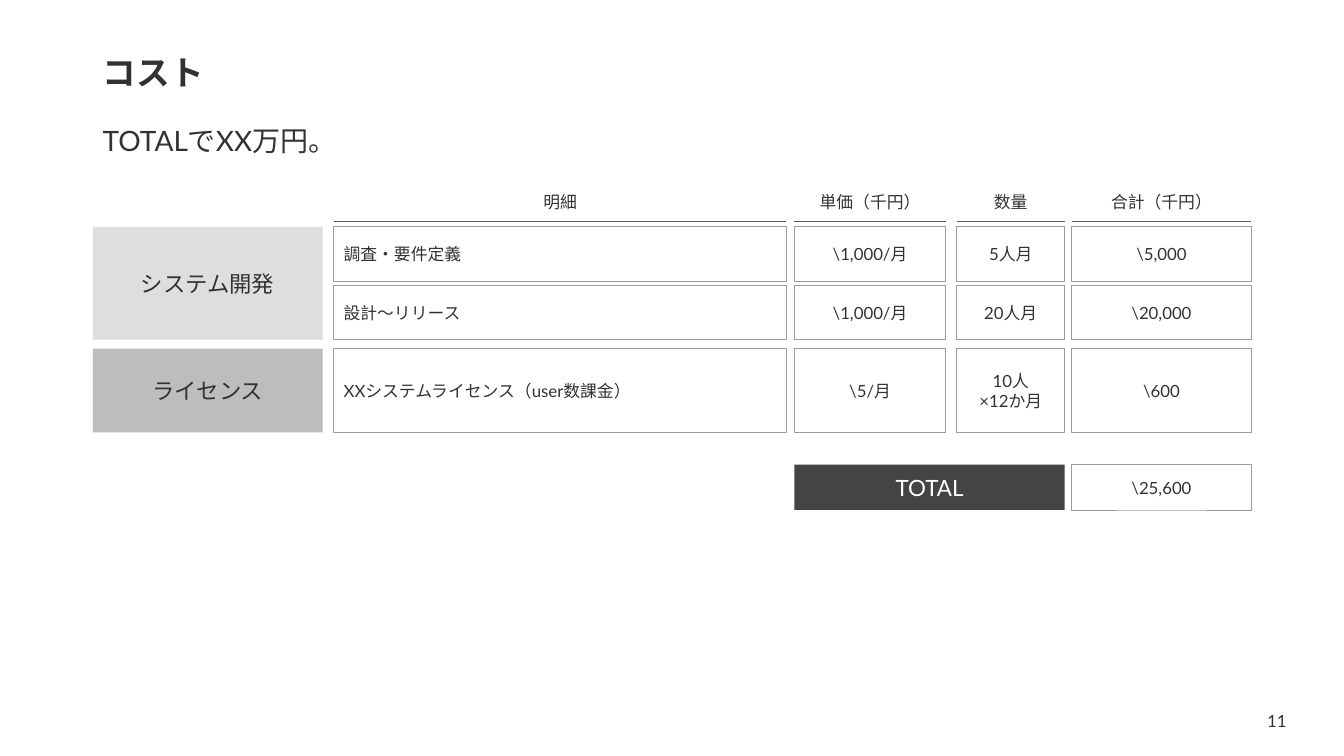
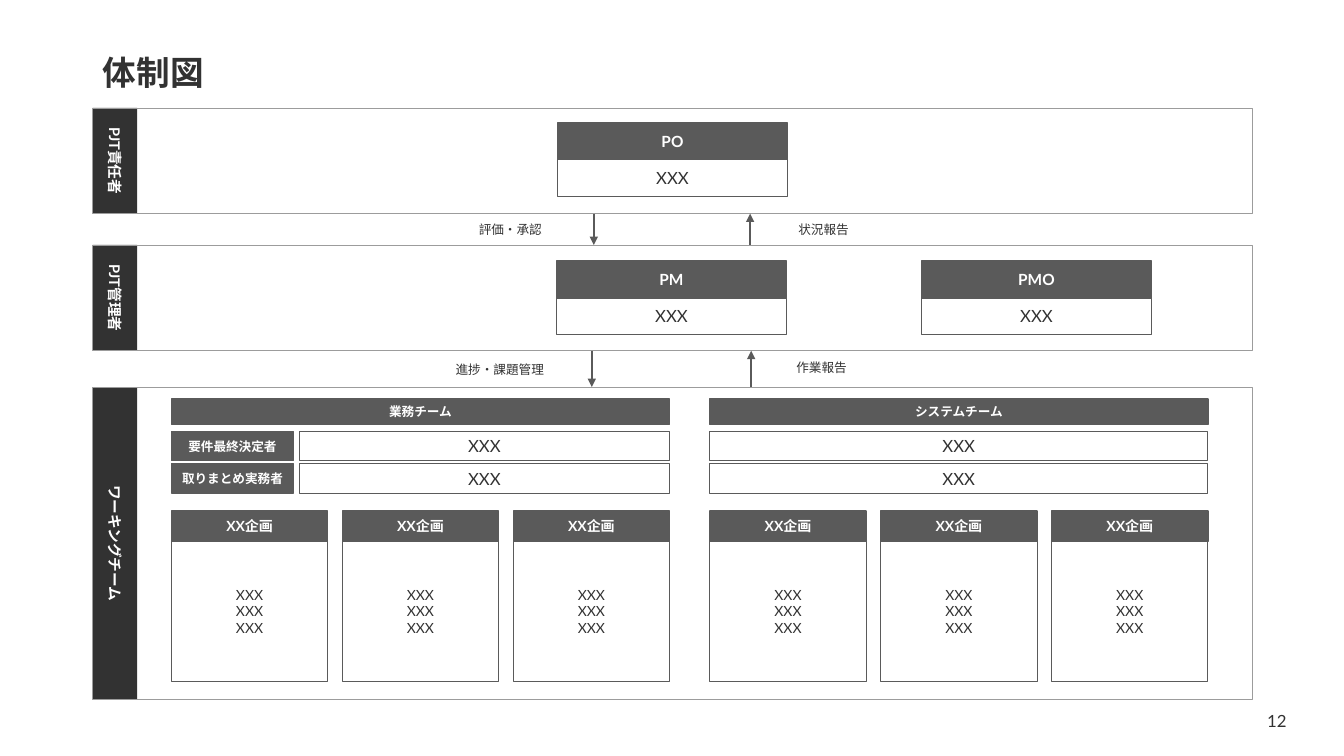
from lxml import etree
from pptx import Presentation
from pptx.dml.color import RGBColor
from pptx.enum.shapes import MSO_CONNECTOR as CONN, MSO_SHAPE as SHAPE
from pptx.enum.text import MSO_ANCHOR as ANCHOR, PP_ALIGN as ALIGN
from pptx.oxml.ns import qn
from pptx.util import Inches, Pt

# Shared style
FONT = "Lato"
INK = RGBColor(0x32, 0x32, 0x32)
WHITE = RGBColor(0xFF, 0xFF, 0xFF)
HEAD = RGBColor(0x5A, 0x5A, 0x5A)
TOTAL_FILL = RGBColor(0x44, 0x44, 0x44)
FRAME = RGBColor(0x9C, 0x9C, 0x9C)
LIGHT = RGBColor(0xDE, 0xDE, 0xDE)
MID = RGBColor(0xBD, 0xBD, 0xBD)
LEFT, WIDTH = 0.92, 11.5

# Cost slide content: columns are (heading, left, width)
COLUMNS = [("明細", 3.31, 4.49), ("単価（千円）", 7.88, 1.5),
           ("数量", 9.49, 1.07), ("合計（千円）", 10.63, 1.78)]
# Categories: (name, fill, top, row height, rows)
CATEGORIES = [
    ("システム開発", LIGHT, 2.25, 0.54, [
        ("調査・要件定義", "\\1,000/月", "5人月", "\\5,000"),
        ("設計～リリース", "\\1,000/月", "20人月", "\\20,000")]),
    ("ライセンス", MID, 3.46, 0.83, [
        ("XXシステムライセンス（user数課金）", "\\5/月",
         "10人\n×12か月", "\\600")]),
]
ROW_GAP = 0.04
TOTAL = ("TOTAL", "\\25,600")

# Organisation slide content
BANDS = [("PJT責任者", 1.07, 1.05), ("PJT管理者", 2.43, 1.05),
         ("ワーキングチーム", 3.84, 3.1)]
ROLES = [("PO", 5.53, 1.22), ("PM", 5.52, 2.59), ("PMO", 9.14, 2.59)]
# Flows: (label, label left, label top, label width, arrow x, from, to)
FLOWS = [("評価・承認", 4.65, 2.15, 0.89, 5.89, 2.12, 2.43),
         ("状況報告", 7.82, 2.15, 0.89, 7.44, 2.43, 2.12),
         ("進捗・課題管理", 4.42, 3.54, 1.12, 5.87, 3.48, 3.84),
         ("作業報告", 7.8, 3.52, 0.89, 7.45, 3.84, 3.48)]
# Teams: (name, left, labels beside the member rows, units)
TEAMS = [("業務チーム", 1.7, ["要件最終決定者", "取りまとめ実務者"], ["XX企画"] * 3),
         ("システムチーム", 7.04, [], ["XX企画"] * 3)]
MEMBERS = ["XXX", "XXX"]
UNIT_MEMBERS = "XXX\nXXX\nXXX"
TEAM_W, UNIT_W, LABEL_W, LABEL_GAP = 4.94, 1.55, 1.21, 0.06


def write(sp, text, size, color=INK, bold=False, align=ALIGN.CENTER,
          anchor=ANCHOR.MIDDLE):
    tf = sp.text_frame
    tf.text = text
    tf.word_wrap = True
    tf.vertical_anchor = anchor
    for p in tf.paragraphs:
        p.alignment = align
        for r in p.runs:
            r.font.name, r.font.size = FONT, Pt(size)
            r.font.bold, r.font.color.rgb = bold, color
    return tf


def add_text(s, x, y, w, h, text, size, **style):
    sp = s.shapes.add_textbox(Inches(x), Inches(y), Inches(w), Inches(h))
    return write(sp, text, size, **style)


def add_box(s, x, y, w, h, text="", size=12, fill=None, line=None,
            line_w=0.5, **style):
    sp = s.shapes.add_shape(SHAPE.RECTANGLE, Inches(x), Inches(y),
                            Inches(w), Inches(h))
    sp.shadow.inherit = False
    if fill is None:
        sp.fill.background()
    else:
        sp.fill.solid()
        sp.fill.fore_color.rgb = fill
    if line is None:
        sp.line.fill.background()
    else:
        sp.line.color.rgb, sp.line.width = line, Pt(line_w)
    return write(sp, text, size, **style)


def add_head(s, x, y, w, h, text, size):
    tf = add_box(s, x, y, w, h, text, size, fill=HEAD, line=HEAD, line_w=1,
                 color=WHITE, bold=True)
    tf.margin_left = tf.margin_right = Inches(0.05)


def add_card(s, x, y, w, head_h, body_h, head, body, head_size, body_size):
    add_head(s, x, y, w, head_h, head, head_size)
    add_box(s, x, y + head_h, w, body_h, body, body_size, line=HEAD)


def add_line(s, x1, y1, x2, y2, width, arrow=False):
    c = s.shapes.add_connector(CONN.STRAIGHT, Inches(x1), Inches(y1),
                               Inches(x2), Inches(y2))
    c.line.color.rgb, c.line.width = HEAD, Pt(width)
    if arrow:
        etree.SubElement(c.line._get_or_add_ln(), qn("a:tailEnd"),
                         type="triangle")
    etree.SubElement(c._element.spPr, qn("a:effectLst"))


def add_slide(prs, title, number):
    s = prs.slides.add_slide(prs.slide_layouts[5])
    sp = s.shapes.title
    sp.left, sp.top = Inches(LEFT), Inches(0.4)
    sp.width, sp.height = Inches(WIDTH), Inches(0.67)
    tf = write(sp, title, 24, bold=True, align=ALIGN.LEFT)
    tf.paragraphs[0].line_spacing = 0.9
    add_text(s, 12.42, 6.95, 0.49, 0.4, str(number), 12)
    return s


def build_cost(prs):
    s = add_slide(prs, "コスト", 11)
    tf = add_text(s, LEFT, 1.08, WIDTH, 0.67, "TOTALでXX万円。", 20,
                  align=ALIGN.LEFT)
    tf.paragraphs[0].line_spacing = 0.9

    # Column headings
    for name, x, w in COLUMNS:
        add_line(s, x, 2.2, x + w, 2.2, 0.5)
        add_text(s, x, 1.85, w, 0.3, name, 12)

    # Categories and their rows
    for name, fill, top, row_h, rows in CATEGORIES:
        height = len(rows) * (row_h + ROW_GAP) - ROW_GAP
        add_box(s, LEFT, top, 2.28, height, name, 16, fill=fill)
        for i, row in enumerate(rows):
            y = top + i * (row_h + ROW_GAP)
            for j, (value, (_, x, w)) in enumerate(zip(row, COLUMNS)):
                add_box(s, x, y, w, row_h, value, line=FRAME,
                        align=ALIGN.CENTER if j else ALIGN.LEFT)

    # Total
    (_, price_x, _), (_, count_x, count_w), (_, sum_x, sum_w) = COLUMNS[1:]
    label, value = TOTAL
    add_box(s, price_x, 4.61, count_x + count_w - price_x, 0.45, label, 16,
            fill=TOTAL_FILL, color=WHITE)
    add_box(s, sum_x, 4.61, sum_w, 0.45, value, line=FRAME)


def build_organisation(prs):
    s = add_slide(prs, "体制図", 12)

    # Bands with a vertical tab
    for name, y, h in BANDS:
        tf = add_box(s, LEFT, y, 0.44, h, name, 10.5, fill=INK,
                     color=WHITE, bold=True)
        tf._txBody.bodyPr.set("vert", "vert")
        add_box(s, LEFT, y, WIDTH, h, line=FRAME)

    # Roles
    for name, x, y in ROLES:
        add_card(s, x, y, 2.28, 0.365, 0.365, name, "XXX", 11, 12)

    # Teams: heading, member rows, unit cards
    for name, left, labels, units in TEAMS:
        add_head(s, left, 3.96, TEAM_W, 0.25, name, 9)
        indent = LABEL_W + LABEL_GAP if labels else 0
        for i, member in enumerate(MEMBERS):
            y = 4.28 + i * 0.32
            if labels:
                add_head(s, left, y, LABEL_W, 0.29, labels[i], 9)
            add_box(s, left + indent, y, TEAM_W - indent, 0.29, member,
                    line=HEAD)
        pitch = (TEAM_W - UNIT_W) / (len(units) - 1)
        for i, unit in enumerate(units):
            add_card(s, left + i * pitch, 5.07, UNIT_W, 0.3, 1.39, unit,
                     UNIT_MEMBERS, 10, 10)

    # Flows between bands
    for label, x, y, w, arrow_x, start, end in FLOWS:
        add_text(s, x, y, w, 0.25, label, 9, align=ALIGN.LEFT,
                 anchor=ANCHOR.TOP)
        add_line(s, arrow_x, start, arrow_x, end, 1.5, arrow=True)


def main():
    prs = Presentation()
    prs.slide_width, prs.slide_height = Inches(13.33), Inches(7.5)
    build_cost(prs)
    build_organisation(prs)
    prs.save("out.pptx")


if __name__ == "__main__":
    main()
